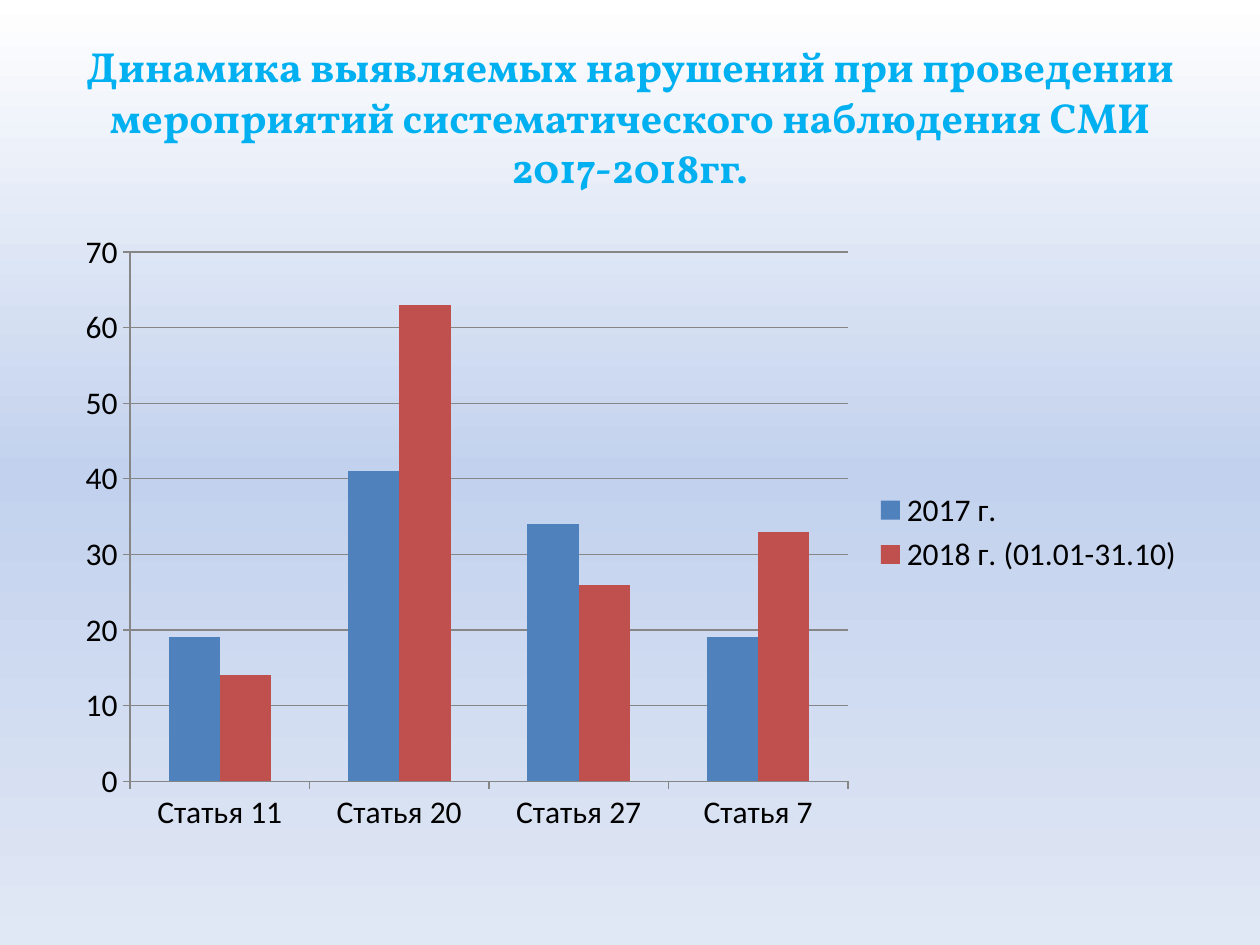
from copy import deepcopy
from pptx import Presentation
from pptx.chart.data import CategoryChartData
from pptx.dml.color import RGBColor
from pptx.enum.chart import XL_CHART_TYPE, XL_LEGEND_POSITION, XL_TICK_MARK
from pptx.enum.text import MSO_ANCHOR, PP_ALIGN
from pptx.oxml.ns import qn
from pptx.util import Pt

WHITE = RGBColor(0xFF, 0xFF, 0xFF)
MID_BLUE = RGBColor(0xC2, 0xD1, 0xED)
PALE_BLUE = RGBColor(0xE1, 0xE8, 0xF5)
TITLE_BLUE = RGBColor(0x00, 0xB0, 0xF0)
BLACK = RGBColor(0x00, 0x00, 0x00)
GRAY = RGBColor(0x86, 0x86, 0x86)
BLUE = RGBColor(0x4F, 0x81, 0xBD)
RED = RGBColor(0xC0, 0x50, 0x4D)

deck = Presentation()
deck.slide_width, deck.slide_height = Pt(720), Pt(540)
page = deck.slides.add_slide(deck.slide_layouts[6])

backdrop = page.background.fill
backdrop.gradient()
backdrop.gradient_angle = 270
stop_list = page.element.find(".//" + qn("a:gsLst"))
stop_list.append(deepcopy(stop_list[-1]))
stop_values = [(0, WHITE), (0.5, MID_BLUE), (1, PALE_BLUE)]
for stop, (position, color) in zip(backdrop.gradient_stops, stop_values):
    stop.position = position
    stop.color.rgb = color

title = page.shapes.add_textbox(Pt(36), Pt(21.6), Pt(648), Pt(90))
title.text_frame.word_wrap = True
title.text_frame.vertical_anchor = MSO_ANCHOR.MIDDLE
title.text_frame.text = (
    "Динамика выявляемых нарушений при проведении "
    "мероприятий систематического наблюдения СМИ 2017-2018гг."
)
para = title.text_frame.paragraphs[0]
para.alignment = PP_ALIGN.CENTER
span = para.runs[0]
span.font.name = "Vollkorn"
span.font.size = Pt(24)
span.font.bold = True
span.font.color.rgb = TITLE_BLUE

violations = CategoryChartData()
violations.categories = ["Статья 11", "Статья 20", "Статья 27", "Статья 7"]
violations.add_series("2017 г.", [19, 41, 34, 19])
violations.add_series("2018 г. (01.01-31.10)", [14, 63, 26, 33])
chart = page.shapes.add_chart(
    XL_CHART_TYPE.COLUMN_CLUSTERED, Pt(36), Pt(126), Pt(648), Pt(356.4), violations
).chart
chart.has_title = False
chart.font.name = "Calibri"
chart.font.size = Pt(18)
chart.font.color.rgb = BLACK
chart.has_legend = True
chart.legend.position = XL_LEGEND_POSITION.RIGHT
chart.legend.include_in_layout = False

value_axis = chart.value_axis
value_axis.minimum_scale = 0
value_axis.maximum_scale = 70
value_axis.major_unit = 10
value_axis.has_major_gridlines = True
for axis in (chart.category_axis, value_axis):
    axis.major_tick_mark = XL_TICK_MARK.OUTSIDE
    axis.minor_tick_mark = XL_TICK_MARK.NONE
for line in (
    chart.category_axis.format.line,
    value_axis.format.line,
    value_axis.major_gridlines.format.line,
):
    line.color.rgb = GRAY
    line.width = Pt(0.75)

plot = chart.plots[0]
plot.gap_width = 150
plot.overlap = 0
plot.vary_by_categories = False
for series, color in zip(plot.series, (BLUE, RED)):
    series.format.fill.solid()
    series.format.fill.fore_color.rgb = color

deck.save("out.pptx")
